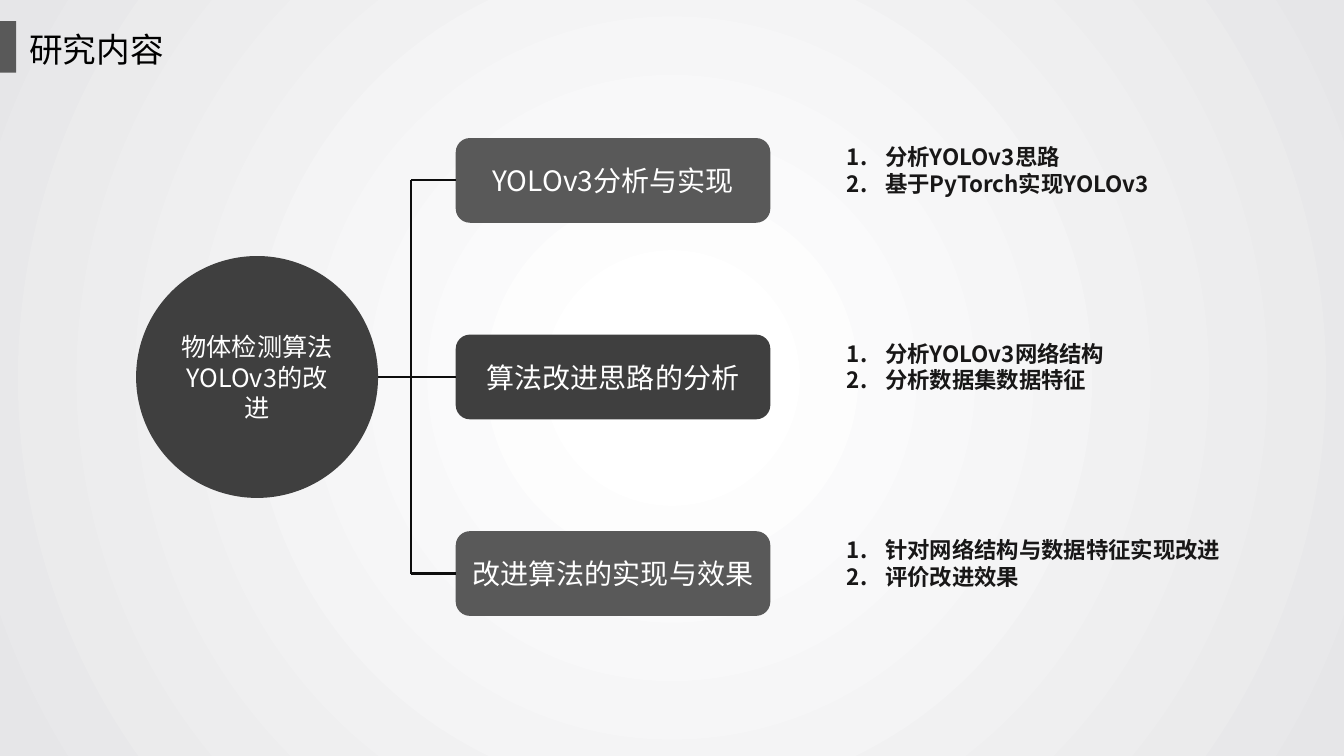
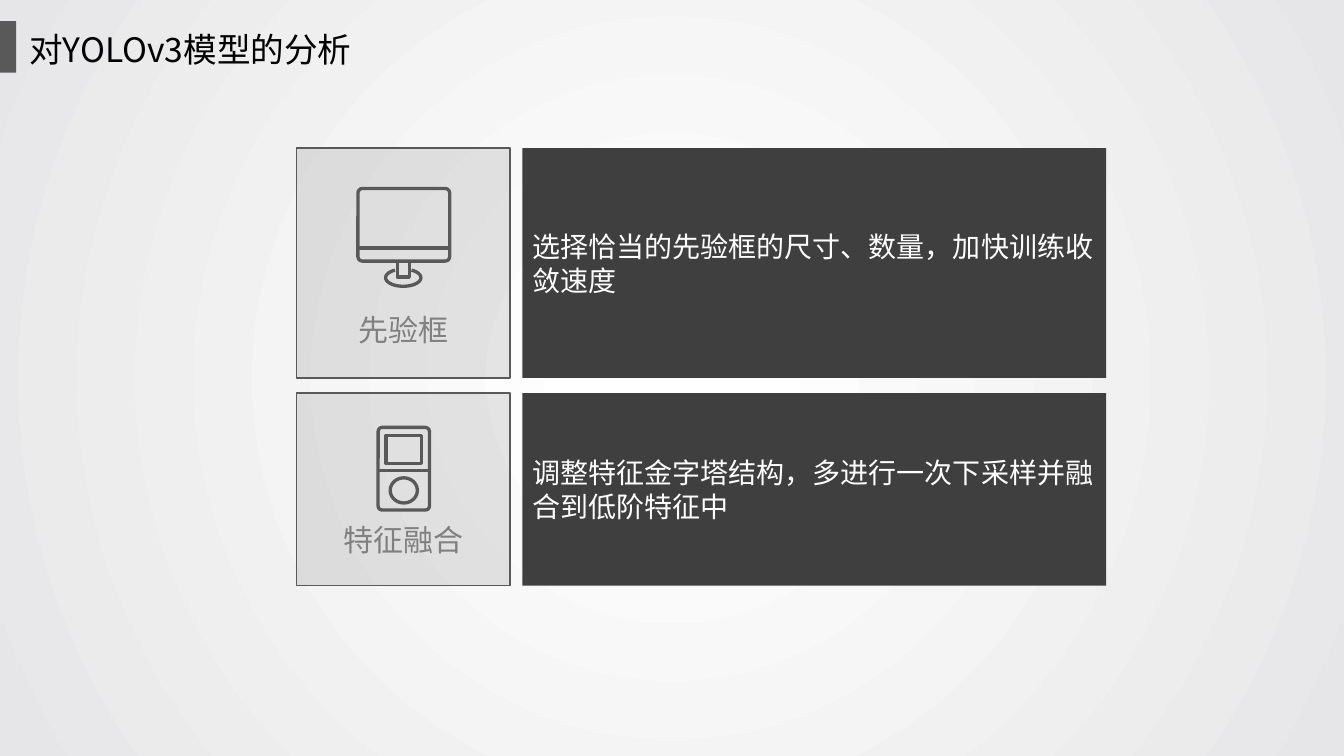
from math import cos, radians, sin

from pptx import Presentation
from pptx.dml.color import RGBColor
from pptx.enum.shapes import MSO_CONNECTOR, MSO_SHAPE
from pptx.enum.text import MSO_ANCHOR, MSO_AUTO_SIZE, PP_ALIGN
from pptx.oxml import parse_xml
from pptx.oxml.ns import nsdecls, qn
from pptx.util import Emu, Pt

FONT = "Noto Sans CJK SC"
DARK, GRAY, MID = "3F3F3F", "595959", "808080"
BLACK, WHITE, INK, RULE = "000000", "FFFFFF", "181717", "0D0D0D"
ICON_LINE = 2.38
LAYOUT_COMPARISON, LAYOUT_TITLE_ONLY = 4, 5


def px(v):
    return Emu(round(v * 9144))


def rgb(color):
    return RGBColor.from_string(color)


def add_xml(parent, tag, **attrs):
    el = parent.makeelement(qn(tag), attrs)
    parent.append(el)
    return el


def put_text(tf, lines, size, color, bold=False, align=PP_ALIGN.LEFT,
             anchor=MSO_ANCHOR.TOP, wrap=True, numbered=False):
    tf.word_wrap = wrap
    tf.auto_size = MSO_AUTO_SIZE.NONE
    tf.vertical_anchor = anchor
    for i, line in enumerate(lines):
        p = tf.add_paragraph() if i else tf.paragraphs[0]
        if numbered:
            pPr = p._p.get_or_add_pPr()
            pPr.set("marL", str(px(38)))
            pPr.set("indent", str(-px(38)))
            add_xml(pPr, "a:buAutoNum", type="arabicPeriod")
        p.alignment = align
        p.space_before = Pt(0)
        r = p.add_run()
        r.text = line
        r.font.size, r.font.bold, r.font.name = Pt(size), bold, FONT
        r.font.color.rgb = rgb(color)
        add_xml(r._r.get_or_add_rPr(), "a:ea", typeface=FONT)


def style(sp, fill=None, line=None, width=1, alpha=None):
    sp.shadow.inherit = False
    if fill:
        sp.fill.solid()
        sp.fill.fore_color.rgb = rgb(fill)
        if alpha:
            clr = sp.element.spPr.find(qn("a:solidFill")).find(qn("a:srgbClr"))
            add_xml(clr, "a:alpha", val=str(alpha * 1000))
    else:
        sp.fill.background()
    if line:
        sp.line.color.rgb = rgb(line)
        sp.line.width = Pt(width)
    else:
        sp.line.fill.background()
    return sp


def add_box(s, kind, x, y, w, h, **look):
    return style(s.shapes.add_shape(kind, px(x), px(y), px(w), px(h)), **look)


def add_line(s, x1, y1, x2, y2, color, width):
    cn = s.shapes.add_connector(MSO_CONNECTOR.STRAIGHT, px(x1), px(y1), px(x2), px(y2))
    cn.line.color.rgb = rgb(color)
    cn.line.width = Pt(width)
    add_xml(cn.element.spPr, "a:effectLst")
    return cn


def add_outline(s, points):
    pts = [(px(x), px(y)) for x, y in points]
    fb = s.shapes.build_freeform(*pts[0])
    fb.add_line_segments(pts[1:], close=False)
    return style(fb.convert_to_shape(), line=GRAY, width=ICON_LINE)


def place(sp, x, y, w, h):
    sp.left, sp.top, sp.width, sp.height = px(x), px(y), px(w), px(h)


def set_background(master):
    master.background.fill.solid()
    bgPr = master.element.find(".//" + qn("p:bgPr"))
    bgPr.replace(bgPr[0], parse_xml(
        f'<a:gradFill {nsdecls("a")} rotWithShape="1"><a:gsLst>'
        '<a:gs pos="9000"><a:srgbClr val="FFFFFF"/></a:gs>'
        '<a:gs pos="100000"><a:srgbClr val="E6E6E8"/></a:gs></a:gsLst>'
        '<a:path path="circle"><a:fillToRect l="50000" t="50000" r="50000" b="50000"/>'
        '</a:path></a:gradFill>'))


def add_slide(prs, layout, title):
    s = prs.slides.add_slide(prs.slide_layouts[layout])
    place(s.shapes.title, 19, 24, 347, 50)
    put_text(s.shapes.title.text_frame, [title], 24, BLACK)
    add_box(s, MSO_SHAPE.RECTANGLE, 0, 21, 16, 51, fill=GRAY)
    return s


def add_topic(s, x, y, trunk_x, label, fill):
    box = add_box(s, MSO_SHAPE.ROUNDED_RECTANGLE, x, y, 312, 84, fill=fill)
    put_text(box.text_frame, [label], 20, WHITE, align=PP_ALIGN.CENTER,
             anchor=MSO_ANCHOR.MIDDLE, wrap=False)
    add_line(s, trunk_x, y + 42, x, y + 42, RULE, 1.5).end_connect(box, 1)


def build_topics(prs):
    s = add_slide(prs, LAYOUT_COMPARISON, "研究内容")
    topics = [
        ("YOLOv3分析与实现", GRAY, ["分析YOLOv3思路", "基于PyTorch实现YOLOv3"]),
        ("算法改进思路的分析", DARK, ["分析YOLOv3网络结构", "分析数据集数据特征"]),
        ("改进算法的实现与效果", GRAY, ["针对网络结构与数据特征实现改进", "评价改进效果"]),
    ]
    top, pitch, trunk_x = 137, 195, 408
    first, mid, last = (top + 42 + pitch * i for i in range(3))
    add_line(s, trunk_x, first, trunk_x, last, RULE, 1.5)
    add_line(s, 375, mid, trunk_x, mid, RULE, 1.5)
    hub = add_box(s, MSO_SHAPE.OVAL, 135, mid - 120, 240, 240, fill=DARK)
    put_text(hub.text_frame, ["物体检测算法YOLOv3的改进"], 18, WHITE,
             align=PP_ALIGN.CENTER, anchor=MSO_ANCHOR.MIDDLE)
    bodies = list(s.placeholders)[1:]
    for i, (label, fill, points) in enumerate(topics):
        y = top + pitch * i
        add_topic(s, 452, y, trunk_x, label, fill)
        place(bodies[i], 830, y, 398, 64)
        put_text(bodies[i].text_frame, points, 16, INK, bold=True, numbered=True)
    for spare in bodies[len(topics):]:
        spare.element.getparent().remove(spare.element)


def add_icon_box(s, kind, x, y, w, h):
    return add_box(s, kind, x, y, w, h, line=GRAY, width=ICON_LINE)


def draw_monitor(s, x, y):
    screen = add_icon_box(s, MSO_SHAPE.ROUNDED_RECTANGLE, x, y, 91, 72)
    screen.adjustments[0] = 0.06
    add_line(s, x, y + 59, x + 91, y + 59, GRAY, ICON_LINE)
    add_outline(s, [(x + dx, y + dy) for dx, dy in ((51, 74), (51, 88), (39, 88), (39, 74))])
    add_outline(s, [(x + 45 + 17.5 * cos(radians(a)), y + 88.5 + 8.5 * sin(radians(a)))
                    for a in range(-62, 243, 8)])


def draw_player(s, x, y):
    case = add_icon_box(s, MSO_SHAPE.ROUNDED_RECTANGLE, x, y, 51, 82)
    case.adjustments[0] = 0.08
    add_icon_box(s, MSO_SHAPE.OVAL, x + 12, y + 50, 27, 25)
    add_line(s, x, y + 43, x + 51, y + 43, GRAY, ICON_LINE)
    add_icon_box(s, MSO_SHAPE.RECTANGLE, x + 8, y + 8, 35, 28)


def add_row(s, x, y, h, label, label_y, text, draw_icon, icon_x, icon_y):
    panel = add_box(s, MSO_SHAPE.RECTANGLE, x + 224, y, 579, h, fill=DARK)
    put_text(panel.text_frame, [text], 20, WHITE, anchor=MSO_ANCHOR.MIDDLE)
    add_box(s, MSO_SHAPE.RECTANGLE, x, y, 212, h, fill=MID, alpha=20, line=GRAY)
    draw_icon(s, x + icon_x, y + icon_y)
    tb = s.shapes.add_textbox(px(x + 32), px(y + label_y), px(148), px(46))
    put_text(tb.text_frame, [label], 21.4, MID, align=PP_ALIGN.CENTER)


def build_model(prs):
    s = add_slide(prs, LAYOUT_TITLE_ONLY, "对YOLOv3模型的分析")
    add_row(s, 294, 147, 228, "先验框", 157,
            "选择恰当的先验框的尺寸、数量，加快训练收敛速度", draw_monitor, 61, 40)
    add_row(s, 294, 390, 191, "特征融合", 123,
            "调整特征金字塔结构，多进行一次下采样并融合到低阶特征中", draw_player, 81, 34)


def main():
    prs = Presentation()
    prs.slide_width, prs.slide_height = px(1333), px(750)
    set_background(prs.slide_master)
    build_topics(prs)
    build_model(prs)
    prs.save("out.pptx")


if __name__ == "__main__":
    main()
